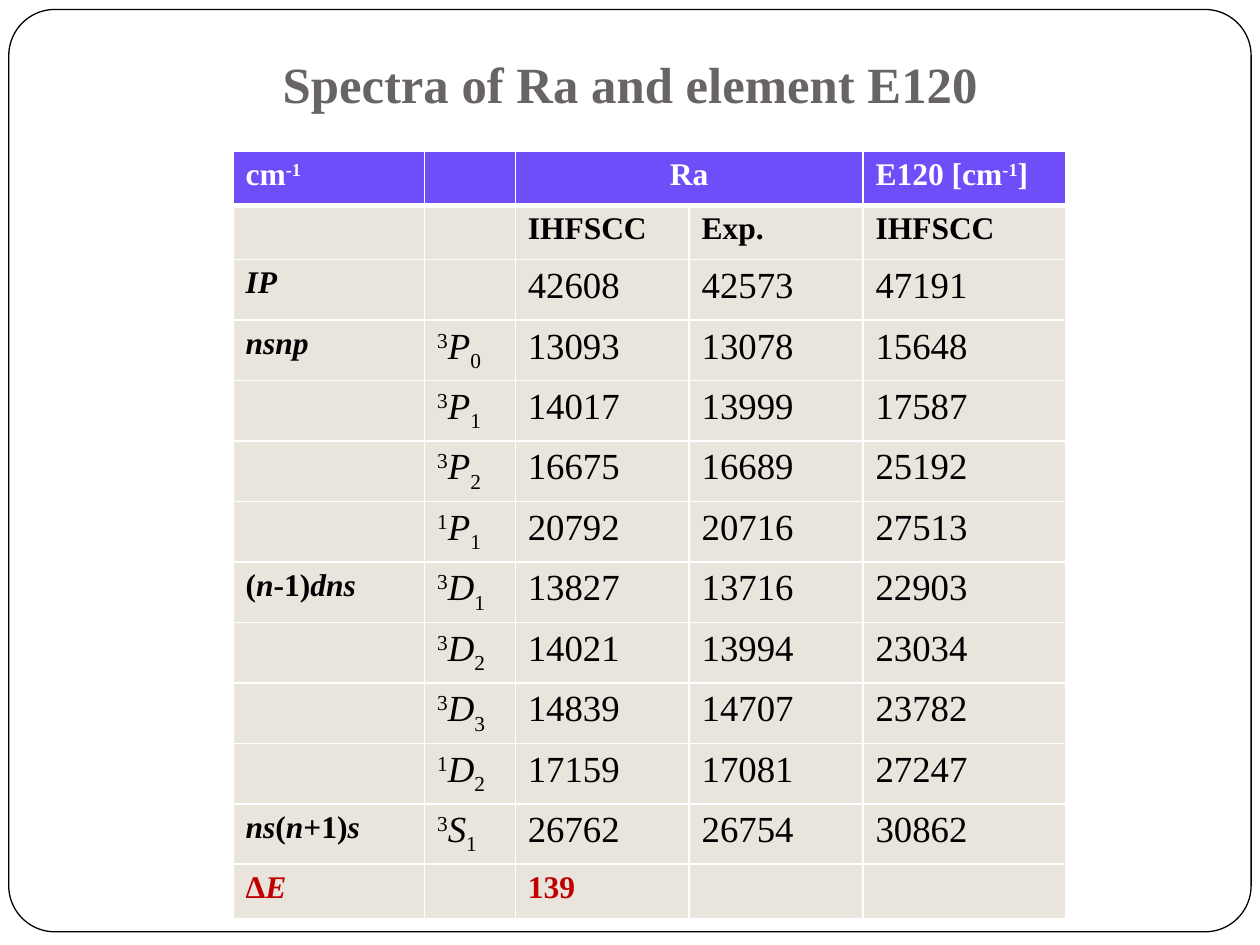
from dataclasses import dataclass

import lxml.etree
import pptx
import pptx.dml.color
import pptx.enum.shapes
import pptx.enum.text
import pptx.oxml.ns
import pptx.util

SLIDE_WIDTH, SLIDE_HEIGHT = 10, 7.5


@dataclass(frozen=True)
class Theme:
    font: str = "Times New Roman"
    title_size: int = 29
    label_size: int = 18
    value_size: int = 21
    white: str = "FFFFFF"
    black: str = "000000"
    title: str = "696464"
    header: str = "6F4EFA"
    body: str = "E9E5DC"
    accent: str = "C00000"
    thin: int = 1
    thick: int = 3


@dataclass(frozen=True)
class Span:
    text: str
    italic: bool = False
    baseline: int = 0


@dataclass(frozen=True)
class Style:
    size: int
    color: str
    bold: bool = True


@dataclass(frozen=True)
class Level:
    """One measured energy: configuration, term symbol, and three values."""
    configuration: tuple[Span, ...]
    term: str
    values: str


THEME = Theme()
HEADING = Style(THEME.label_size, THEME.white)
LABEL = Style(THEME.label_size, THEME.black)
VALUE = Style(THEME.value_size, THEME.black, bold=False)
DIFFERENCE = Style(THEME.label_size, THEME.accent)

# Table grid; the tight margin leaves room for subscripts within a row
COLUMN_WIDTHS = (1.52, 0.72, 1.38, 1.38, 1.61)
LABEL_ROW, VALUE_ROW = 0.43, 0.48
TERM_MARGIN = 0.02

INVERSE = Span("-1", baseline=30)
HEADINGS = {0: (Span("cm"), INVERSE), 2: (Span("Ra"),),
            4: (Span("E120 [cm"), INVERSE, Span("]"))}
METHODS = {2: "IHFSCC", 3: "Exp.", 4: "IHFSCC"}
LEVELS = (
    Level((Span("IP", True),), "", "42608 42573 47191"),
    Level((Span("nsnp", True),), "3P0", "13093 13078 15648"),
    Level((), "3P1", "14017 13999 17587"),
    Level((), "3P2", "16675 16689 25192"),
    Level((), "1P1", "20792 20716 27513"),
    Level((Span("("), Span("n", True), Span("-1)"), Span("dns", True)),
          "3D1", "13827 13716 22903"),
    Level((), "3D2", "14021 13994 23034"),
    Level((), "3D3", "14839 14707 23782"),
    Level((), "1D2", "17159 17081 27247"),
    Level((Span("ns", True), Span("("), Span("n", True), Span("+1)"), Span("s", True)),
          "3S1", "26762 26754 30862"),
)
DELTA = (Span("Δ"), Span("E", True))


def rgb(color: str) -> pptx.dml.color.RGBColor:
    return pptx.dml.color.RGBColor.from_string(color)


def across(percent: float) -> int:
    return pptx.util.Inches(SLIDE_WIDTH * percent / 100)


def down(percent: float) -> int:
    return pptx.util.Inches(SLIDE_HEIGHT * percent / 100)


def write(paragraph, spans: tuple[Span, ...], style: Style) -> None:
    for part in spans:
        span = paragraph.add_run()
        span.text = part.text
        span.font.name = THEME.font
        span.font.size = pptx.util.Pt(style.size)
        span.font.bold = style.bold
        span.font.italic = part.italic
        span.font.color.rgb = rgb(style.color)
        if part.baseline:
            span._r.get_or_add_rPr().set("baseline", str(part.baseline * 1000))


def term_symbol(term: str) -> tuple[Span, ...]:
    if not term:
        return ()
    multiplicity, letter, momentum = term
    return (Span(multiplicity, baseline=30), Span(letter, True),
            Span(momentum, baseline=-25))


def paint_cell(cell, fill: str, top: int, bottom: int) -> None:
    properties = cell._tc.get_or_add_tcPr()
    widths = {"lnL": THEME.thin, "lnR": THEME.thin, "lnT": top, "lnB": bottom}
    for side, width in widths.items():
        line = lxml.etree.SubElement(properties, pptx.oxml.ns.qn(f"a:{side}"),
                                     w=str(pptx.util.Pt(width)))
        solid = lxml.etree.SubElement(line, pptx.oxml.ns.qn("a:solidFill"))
        lxml.etree.SubElement(solid, pptx.oxml.ns.qn("a:srgbClr"), val=THEME.white)
    cell.fill.solid()
    cell.fill.fore_color.rgb = rgb(fill)


def draw_frame(slide) -> None:
    frame = slide.shapes.add_shape(
        pptx.enum.shapes.MSO_SHAPE.ROUNDED_RECTANGLE,
        across(0.7), down(1), across(98.6), down(97.6))
    frame.adjustments[0] = 0.05
    frame.shadow.inherit = False
    frame.fill.solid()
    frame.fill.fore_color.rgb = rgb(THEME.white)
    frame.line.color.rgb = rgb(THEME.black)
    frame.line.width = pptx.util.Pt(0.75)


def draw_title(slide, text: str) -> None:
    box = slide.shapes.add_textbox(across(5.9), down(2.3), across(88.3), down(11.1))
    frame = box.text_frame
    frame.word_wrap = True
    frame.vertical_anchor = pptx.enum.text.MSO_ANCHOR.BOTTOM
    frame.margin_bottom = pptx.util.Inches(0.1)
    para = frame.paragraphs[0]
    para.alignment = pptx.enum.text.PP_ALIGN.CENTER
    write(para, (Span(text),), Style(THEME.title_size, THEME.title))


def draw_table(slide) -> None:
    heights = [LABEL_ROW] * 2 + [VALUE_ROW] * len(LEVELS) + [LABEL_ROW]
    table = slide.shapes.add_table(
        len(heights), len(COLUMN_WIDTHS), across(18.5), down(16),
        pptx.util.Inches(sum(COLUMN_WIDTHS)), pptx.util.Inches(sum(heights))).table
    for column, width in zip(table.columns, COLUMN_WIDTHS):
        column.width = pptx.util.Inches(width)

    # Fills and rules, with a heavier rule under the header
    for index, height in enumerate(heights):
        table.rows[index].height = pptx.util.Inches(height)
        for cell in table.rows[index].cells:
            paint_cell(cell, THEME.body if index else THEME.header,
                       THEME.thick if index == 1 else THEME.thin,
                       THEME.thin if index else THEME.thick)

    def fill_in(row: int, column: int, spans: tuple[Span, ...], style: Style) -> None:
        write(table.cell(row, column).text_frame.paragraphs[0], spans, style)

    # Header and method names
    table.cell(0, 2).merge(table.cell(0, 3))
    for column, spans in HEADINGS.items():
        fill_in(0, column, spans, HEADING)
    table.cell(0, 2).text_frame.paragraphs[0].alignment = pptx.enum.text.PP_ALIGN.CENTER
    for column, method in METHODS.items():
        fill_in(1, column, (Span(method),), LABEL)

    # Energy levels
    for row, level in enumerate(LEVELS, start=2):
        fill_in(row, 0, level.configuration, LABEL)
        fill_in(row, 1, term_symbol(level.term), VALUE)
        table.cell(row, 1).margin_bottom = pptx.util.Inches(TERM_MARGIN)
        for column, value in enumerate(level.values.split(), start=2):
            fill_in(row, column, (Span(value),), VALUE)

    # Mean difference
    last = len(heights) - 1
    fill_in(last, 0, DELTA, DIFFERENCE)
    fill_in(last, 2, (Span("139"),), DIFFERENCE)


def main() -> None:
    deck = pptx.Presentation()
    deck.slide_width, deck.slide_height = across(100), down(100)
    slide = deck.slides.add_slide(deck.slide_layouts[6])
    draw_frame(slide)
    draw_title(slide, "Spectra of Ra and element E120")
    draw_table(slide)
    deck.save("out.pptx")


if __name__ == "__main__":
    main()
